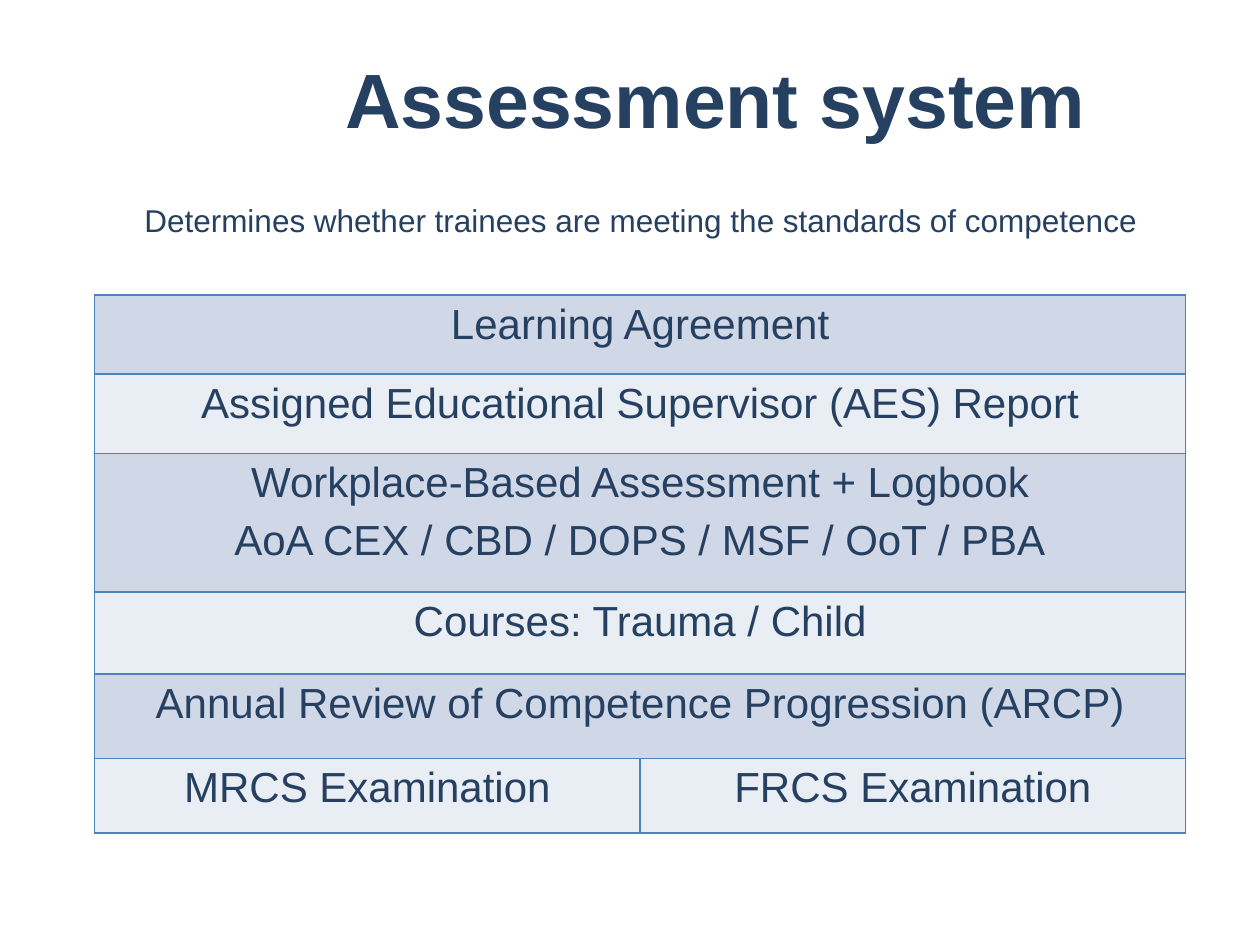
from dataclasses import dataclass

from lxml.etree import SubElement
from pptx import Presentation
from pptx.dml.color import RGBColor
from pptx.enum.text import MSO_ANCHOR, PP_ALIGN
from pptx.oxml.ns import qn
from pptx.util import Inches, Pt


@dataclass(frozen=True)
class Theme:
    font: str = "Arial"
    text: str = "254061"
    border: str = "4F81BD"
    bands: tuple = ("D0D8E8", "E9EDF4")
    title_size: int = 44
    subtitle_size: int = 18
    table_size: int = 24
    border_width: int = 1
    paragraph_gap: int = 3


THEME = Theme()

# Row height in inches, then cells; each cell is a list of lines.
ASSESSMENT_ROWS = [
    (0.63, [["Learning Agreement"]]),
    (0.63, [["Assigned Educational Supervisor (AES) Report"]]),
    (1.1, [["Workplace-Based Assessment + Logbook",
            "AoA CEX / CBD / DOPS / MSF / OoT / PBA"]]),
    (0.65, [["Courses: Trauma / Child"]]),
    (0.67, [["Annual Review of Competence Progression (ARCP)"]]),
    (0.59, [["MRCS Examination"], ["FRCS Examination"]]),
]


def write_lines(text_frame, lines, size, bold=False, gap=0):
    """Write centred lines, with a gap in points around each one."""
    for index, line in enumerate(lines):
        paragraph = text_frame.add_paragraph() if index else text_frame.paragraphs[0]
        paragraph.alignment = PP_ALIGN.CENTER
        paragraph.space_before = Pt(gap if index else 0)
        paragraph.space_after = Pt(gap)
        run = paragraph.add_run()
        run.text = line
        run.font.name = THEME.font
        run.font.size = Pt(size)
        run.font.bold = bold
        run.font.color.rgb = RGBColor.from_string(THEME.text)


def add_text(slide, box, text, size, bold=False, anchor=MSO_ANCHOR.TOP):
    text_frame = slide.shapes.add_textbox(*map(Inches, box)).text_frame
    text_frame.word_wrap = True
    text_frame.vertical_anchor = anchor
    write_lines(text_frame, [text], size, bold)


def style_cell(cell, color):
    """Draw the cell's borders, then its fill."""
    properties = cell._tc.get_or_add_tcPr()
    for side in ("a:lnL", "a:lnR", "a:lnT", "a:lnB"):
        line = SubElement(properties, qn(side), w=str(Pt(THEME.border_width)))
        fill = SubElement(line, qn("a:solidFill"))
        SubElement(fill, qn("a:srgbClr"), val=THEME.border)
    cell.fill.solid()
    cell.fill.fore_color.rgb = RGBColor.from_string(color)


def add_assessment_table(slide, box, rows):
    column_count = max(len(cells) for _, cells in rows)
    table = slide.shapes.add_table(len(rows), column_count, *map(Inches, box)).table
    table.first_row = False
    table.horz_banding = False
    for column in table.columns:
        column.width = Inches(box[2] / column_count)
    for row_index, (height, cells) in enumerate(rows):
        table.rows[row_index].height = Inches(height)
        for column_index in range(column_count):
            style_cell(table.cell(row_index, column_index),
                       THEME.bands[row_index % len(THEME.bands)])
        if len(cells) == 1:
            table.cell(row_index, 0).merge(table.cell(row_index, column_count - 1))
        for column_index, lines in enumerate(cells):
            write_lines(table.cell(row_index, column_index).text_frame, lines,
                        THEME.table_size, gap=THEME.paragraph_gap)


def main():
    presentation = Presentation()
    presentation.slide_width = Inches(10)
    presentation.slide_height = Inches(7.5)
    slide = presentation.slides.add_slide(presentation.slide_layouts[6])
    add_text(slide, (0.43, 0, 10, 1.55), "\tAssessment system",
             THEME.title_size, bold=True, anchor=MSO_ANCHOR.MIDDLE)
    add_assessment_table(slide, (0.75, 2.34, 8.66, 4.27), ASSESSMENT_ROWS)
    add_text(slide, (0.91, 1.55, 8.35, 0.4),
             "Determines whether trainees are meeting the standards of competence",
             THEME.subtitle_size)
    presentation.save("out.pptx")


if __name__ == "__main__":
    main()
